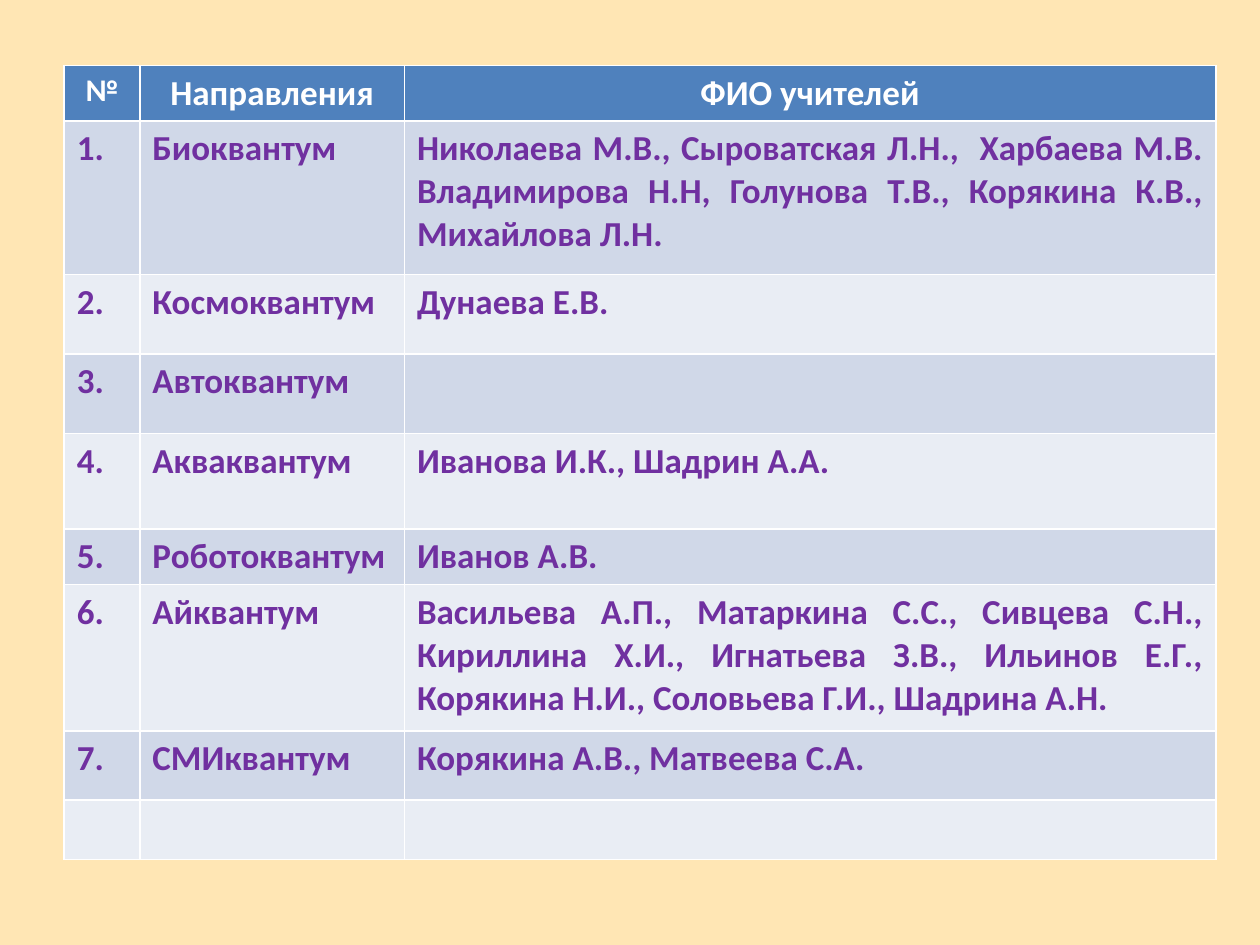
"""Build a slide with a table of quantum directions and their teachers."""
from pptx import Presentation
from pptx.dml.color import RGBColor
from pptx.enum.text import PP_ALIGN
from pptx.util import Inches, Pt

BACKGROUND = RGBColor(0xFF, 0xE6, 0xB4)
WHITE = RGBColor(0xFF, 0xFF, 0xFF)
PURPLE = RGBColor(0x70, 0x30, 0xA0)
HEADER = RGBColor(0x4F, 0x81, 0xBD)
BANDS = [RGBColor(0xE9, 0xED, 0xF4), RGBColor(0xD0, 0xD8, 0xE8)]

COL_WIDTHS = [0.6, 2.1, 6.44]
ROW_HEIGHTS = [0.43, 1.22, 0.63, 0.63, 0.76, 0.43, 1.16, 0.55, 0.47]
ROWS = [
    ("№", "Направления", "ФИО учителей"),
    ("1.", "Биоквантум",
     "Николаева М.В., Сыроватская Л.Н.,  Харбаева М.В. "
     "Владимирова Н.Н, Голунова Т.В., Корякина К.В., Михайлова Л.Н."),
    ("2.", "Космоквантум", "Дунаева Е.В."),
    ("3.", "Автоквантум", ""),
    ("4.", "Акваквантум", "Иванова И.К., Шадрин А.А."),
    ("5.", "Роботоквантум", "Иванов А.В."),
    ("6.", "Айквантум",
     "Васильева А.П., Матаркина С.С., Сивцева С.Н., "
     "Кириллина Х.И., Игнатьева З.В., Ильинов Е.Г., "
     "Корякина Н.И., Соловьева Г.И., Шадрина А.Н."),
    ("7.", "СМИквантум", "Корякина А.В., Матвеева С.А."),
    ("", "", ""),
]

prs = Presentation()
prs.slide_width = Inches(10)
prs.slide_height = Inches(7.5)
s = prs.slides.add_slide(prs.slide_layouts[6])
s.background.fill.solid()
s.background.fill.fore_color.rgb = BACKGROUND

table = s.shapes.add_table(
    len(ROWS), len(COL_WIDTHS), Inches(0.51), Inches(0.52),
    Inches(sum(COL_WIDTHS)), Inches(sum(ROW_HEIGHTS))).table
for col, width in zip(table.columns, COL_WIDTHS):
    col.width = Inches(width)
for row, height in zip(table.rows, ROW_HEIGHTS):
    row.height = Inches(height)

for i, texts in enumerate(ROWS):
    for j, text in enumerate(texts):
        cell = table.cell(i, j)
        cell.fill.solid()
        cell.fill.fore_color.rgb = BANDS[i % 2] if i else HEADER
        if not text:
            continue
        cell.text = text
        p = cell.text_frame.paragraphs[0]
        p.alignment = PP_ALIGN.JUSTIFY if i else PP_ALIGN.CENTER
        p.font.name = "Calibri"
        p.font.size = Pt(18 if text == "№" else 20)
        p.font.bold = True
        p.font.color.rgb = PURPLE if i else WHITE

prs.save("out.pptx")
